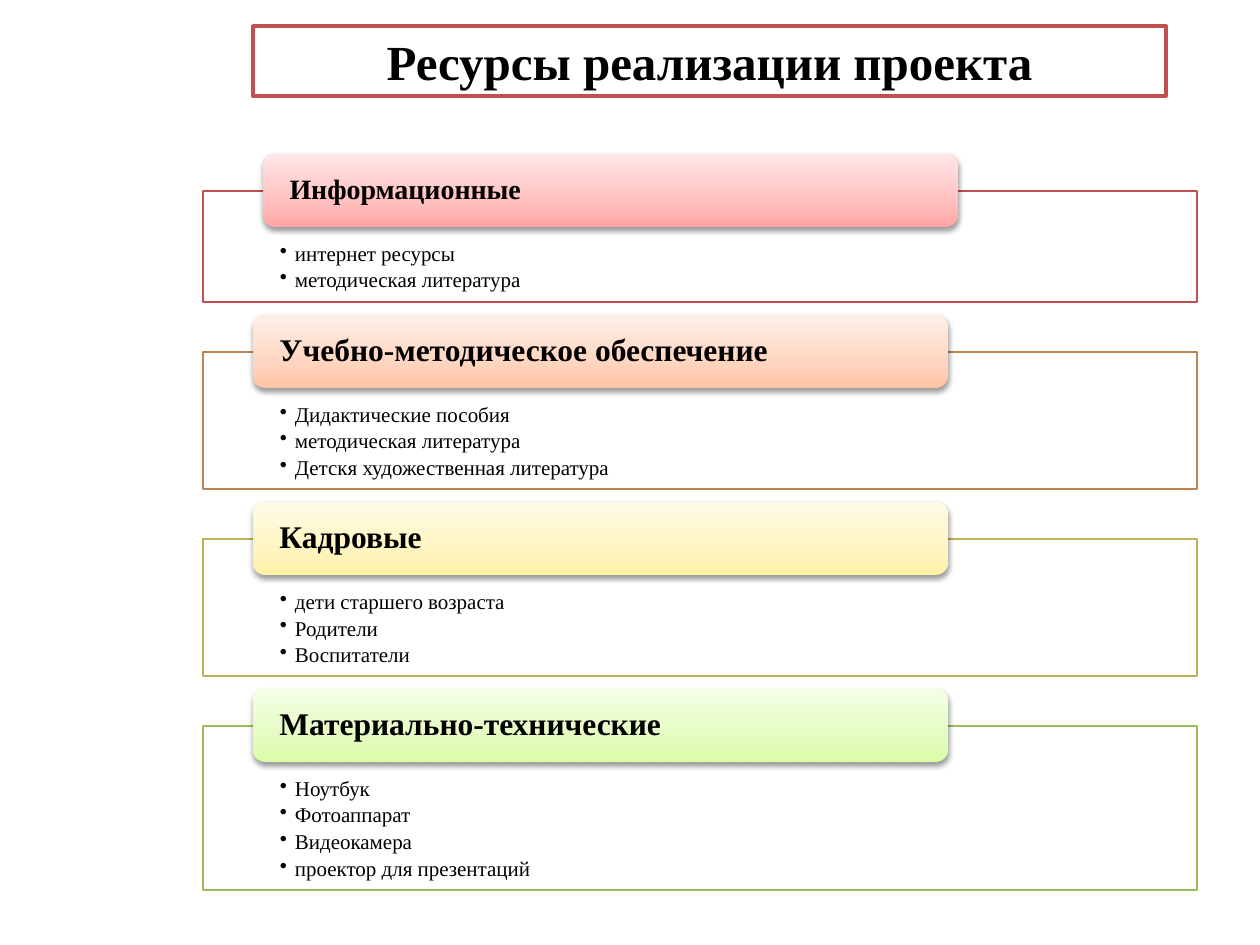
from lxml.etree import SubElement
from pptx import Presentation
from pptx.dml.color import RGBColor
from pptx.enum.shapes import MSO_SHAPE as Shape
from pptx.enum.text import MSO_ANCHOR as Anchor, PP_ALIGN as Align
from pptx.oxml import parse_xml
from pptx.oxml.ns import nsdecls, qn
from pptx.util import Emu, Pt

PX_PER_INCH = 126
FONT = "Times New Roman"
COLORS = {
    "text": "000000",
    "paper": "FFFFFF",
    "red": "C0504D",
    "orange": "BE8351",
    "yellow": "BDB255",
    "green": "9BBB59",
}
# Header gradients from bottom to top
GRADIENTS = {
    "red": ("FFA6A5", "FFC0BF", "FFE7E7"),
    "orange": ("FFC5A5", "FFD5BF", "FFEFE7"),
    "yellow": ("FFF2A5", "FEF5C0", "FFFBE7"),
    "green": ("DAFDA7", "E4FCC2", "F5FFE7"),
}
GRADIENT_STOPS = (0, 35, 100)

# Heading, heading size, heading indent, panel height, colour, items
RESOURCES = [
    ("Информационные", 16, 60, 111, "red",
     ["интернет ресурсы", "методическая литература"]),
    ("Учебно-методическое обеспечение", 18, 50, 137, "orange",
     ["Дидактические пособия", "методическая литература",
      "Детскя художественная литература"]),
    ("Кадровые", 18, 50, 137, "yellow",
     ["дети старшего возраста", "Родители", "Воспитатели"]),
    ("Материально-технические", 18, 50, 164, "green",
     ["Ноутбук", "Фотоаппарат", "Видеокамера", "проектор для презентаций"]),
]
PANEL_LEFT, PANEL_TOP, PANEL_WIDTH, PANEL_GAP = 203, 191, 994, 50
HEADER_WIDTH, HEADER_HEIGHT, HEADER_RISE = 695, 73, 37


def px(length):
    return Emu(round(length * 914400 / PX_PER_INCH))


def rgb(name):
    return RGBColor.from_string(COLORS[name])


def add_box(slide, kind, box, margins, anchor):
    shape = slide.shapes.add_shape(kind, *map(px, box))
    shape.shadow.inherit = False
    frame = shape.text_frame
    frame.word_wrap = True
    frame.vertical_anchor = anchor
    (frame.margin_left, frame.margin_top,
     frame.margin_right, frame.margin_bottom) = map(px, margins)
    return shape


def outline(shape, color, width):
    shape.fill.solid()
    shape.fill.fore_color.rgb = rgb("paper")
    shape.line.color.rgb = rgb(color)
    shape.line.width = Pt(width)


def style_text(paragraph, size, bold=False, align=Align.LEFT):
    paragraph.alignment = align
    for run in paragraph.runs:
        run.font.name = FONT
        run.font.size = Pt(size)
        run.font.bold = bold
        run.font.color.rgb = rgb("text")


def fill_gradient(shape, colors):
    stops = "".join(
        f'<a:gs pos="{stop * 1000}"><a:srgbClr val="{color}"/></a:gs>'
        for stop, color in zip(GRADIENT_STOPS, colors))
    shape.fill.background()
    no_fill = shape._element.spPr.find(qn("a:noFill"))
    no_fill.getparent().replace(no_fill, parse_xml(
        f'<a:gradFill {nsdecls("a")} rotWithShape="1"><a:gsLst>{stops}</a:gsLst>'
        '<a:lin ang="16200000" scaled="0"/></a:gradFill>'))


def add_soft_shadow(shape):
    effects = shape._element.spPr.find(qn("a:effectLst"))
    effects.append(parse_xml(
        f'<a:outerShdw {nsdecls("a")} blurRad="{Pt(3.1)}" dist="{Pt(1.6)}" '
        'dir="5400000" rotWithShape="0"><a:srgbClr val="000000">'
        '<a:alpha val="38000"/></a:srgbClr></a:outerShdw>'))


def add_bullet(paragraph):
    properties = paragraph._p.get_or_add_pPr()
    properties.set("marL", str(px(15)))
    properties.set("indent", str(-px(15)))
    SubElement(properties, qn("a:buChar"), char="•")


def add_title(slide, box, title):
    shape = add_box(slide, Shape.RECTANGLE, box, (12, 0, 12, 0), Anchor.MIDDLE)
    outline(shape, "red", 2)
    shape.text_frame.text = title
    style_text(shape.text_frame.paragraphs[0], 28, True, Align.CENTER)


def add_items(slide, box, color, items):
    panel = add_box(slide, Shape.RECTANGLE, box, (77, 52, 77, 11), Anchor.TOP)
    outline(panel, color, 0.75)
    panel.text_frame.text = "\n".join(items)
    for paragraph in panel.text_frame.paragraphs:
        add_bullet(paragraph)
        paragraph.line_spacing = 0.9
        paragraph.space_after = Pt(2.4)
        style_text(paragraph, 12)


def add_header(slide, box, color, heading, size):
    header = add_box(slide, Shape.ROUNDED_RECTANGLE, box, (23, 0, 23, 0),
                     Anchor.MIDDLE)
    fill_gradient(header, GRADIENTS[color])
    header.line.fill.background()
    add_soft_shadow(header)
    header.text_frame.text = heading
    paragraph = header.text_frame.paragraphs[0]
    paragraph.line_spacing = 0.9
    style_text(paragraph, size, True)


def add_resource(slide, box, heading, size, indent, color, items):
    """Place a list panel with its header straddling the top edge."""
    left, top, _, _ = box
    add_items(slide, box, color, items)
    header_box = (left + indent, top - HEADER_RISE, HEADER_WIDTH, HEADER_HEIGHT)
    add_header(slide, header_box, color, heading, size)


def main():
    deck = Presentation()
    deck.slide_width, deck.slide_height = px(1260), px(945)
    slide = deck.slides.add_slide(deck.slide_layouts[6])
    add_title(slide, (253, 26, 913, 70), "Ресурсы реализации проекта")
    top = PANEL_TOP
    for heading, size, indent, height, color, items in RESOURCES:
        box = (PANEL_LEFT, top, PANEL_WIDTH, height)
        add_resource(slide, box, heading, size, indent, color, items)
        top += height + PANEL_GAP
    deck.save("out.pptx")


if __name__ == "__main__":
    main()
